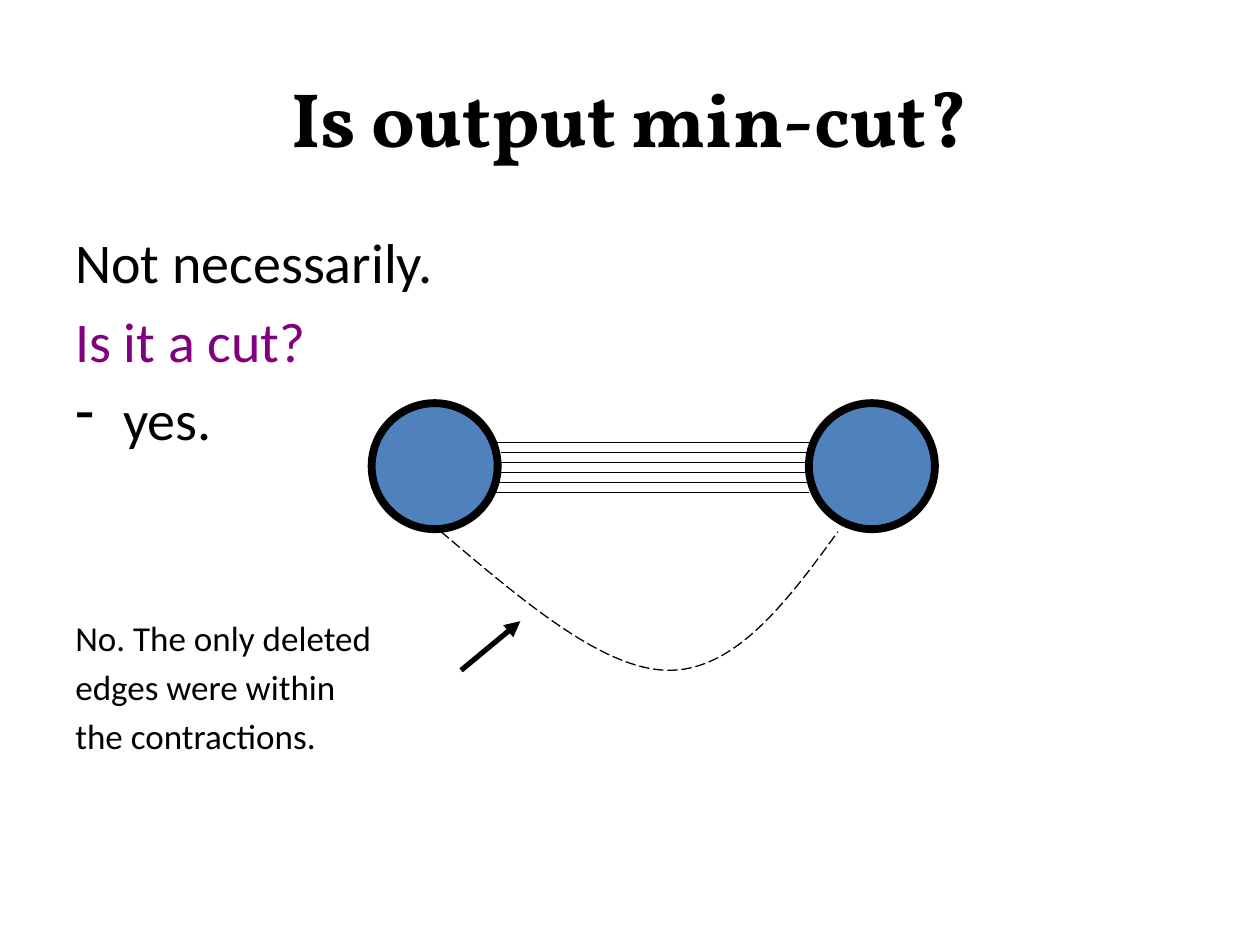
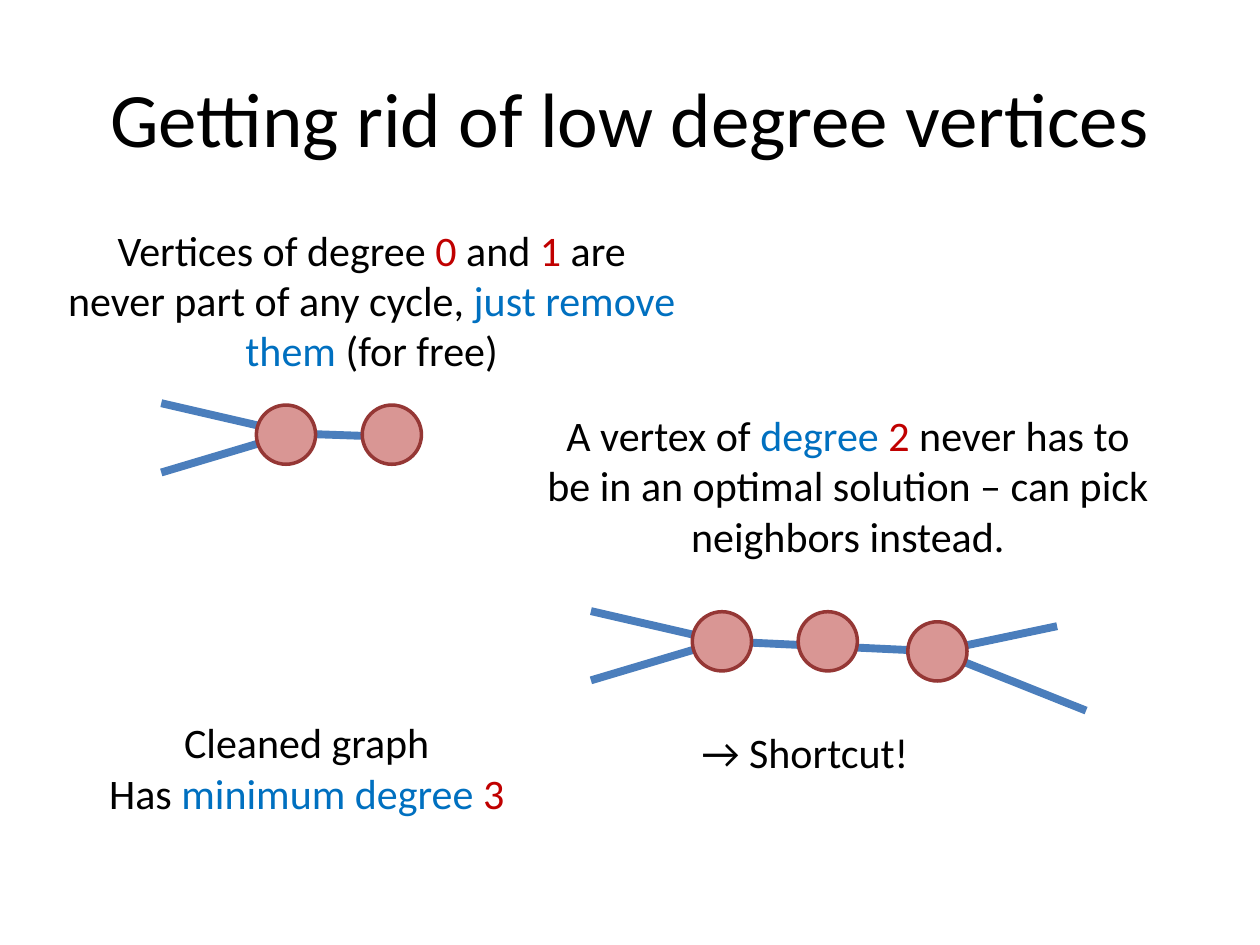
from lxml import etree
from pptx import Presentation
from pptx.dml.color import RGBColor
from pptx.enum.dml import MSO_LINE
from pptx.enum.shapes import MSO_CONNECTOR, MSO_SHAPE
from pptx.enum.text import MSO_ANCHOR, PP_ALIGN
from pptx.oxml.ns import qn
from pptx.util import Inches, Pt

STRAIGHT, OVAL = MSO_CONNECTOR.STRAIGHT, MSO_SHAPE.OVAL
LEFT, CENTER, MIDDLE = PP_ALIGN.LEFT, PP_ALIGN.CENTER, MSO_ANCHOR.MIDDLE
LONG_DASH = MSO_LINE.LONG_DASH

BLACK = RGBColor(0x00, 0x00, 0x00)
PURPLE = RGBColor(0x80, 0x00, 0x80)
RED = RGBColor(0xC0, 0x00, 0x00)
BLUE = RGBColor(0x00, 0x70, 0xC0)
NODE_BLUE = RGBColor(0x4F, 0x81, 0xBD)
EDGE_BLUE = RGBColor(0x4B, 0x7E, 0xBC)
NODE_PINK = RGBColor(0xD9, 0x96, 0x94)
NODE_RIM = RGBColor(0x95, 0x37, 0x35)

WIDTH, HEIGHT = 10, 7.5
MARGIN = WIDTH / 20
BODY_FONT = "Calibri"
TITLE_BOX = (MARGIN, HEIGHT / 25, WIDTH - 2 * MARGIN, HEIGHT / 6)


def style_font(font, **values):
    """Set font attributes from the given values."""
    color = values.pop("color", BLACK)
    for name, value in values.items():
        setattr(font, name, value)
    font.color.rgb = color


def style_line(line, color, width):
    """Set the colour and the width of a line in points."""
    line.color.rgb = color
    line.width = Pt(width)


def add_titled_slide(prs, title, **font):
    """Add a title-only slide with a centred title."""
    s = prs.slides.add_slide(prs.slide_layouts[5])
    sp = s.shapes.title
    for name, value in zip(("left", "top", "width", "height"), TITLE_BOX):
        setattr(sp, name, Inches(value))
    tf = sp.text_frame
    tf.text, tf.vertical_anchor = title, MIDDLE
    p = tf.paragraphs[0]
    p.alignment = CENTER
    style_font(p.runs[0].font, **{"name": BODY_FONT, "size": Pt(44), **font})
    return s


def add_text(s, box, paragraphs, size, align=LEFT, wrap=True, gap=0):
    """Add a text box of paragraphs, each a list of (text, colour) runs."""
    tf = s.shapes.add_textbox(*map(Inches, box)).text_frame
    tf.word_wrap = wrap
    for i, runs in enumerate(paragraphs):
        p = tf.paragraphs[0] if i == 0 else tf.add_paragraph()
        p.alignment = align
        p.space_before = Pt(gap if i else 0)
        for text, color in runs:
            r = p.add_run()
            r.text = text
            style_font(r.font, name=BODY_FONT, size=Pt(size), color=color)
    return tf


def add_dash_bullet(p):
    """Give a paragraph a hanging dash."""
    pPr = p._p.get_or_add_pPr()
    pPr.set("marL", str(Inches(0.38)))
    pPr.set("indent", str(-Inches(0.38)))
    etree.SubElement(pPr, qn("a:buChar")).set("char", "-")


def add_node(s, center, size, fill, rim, rim_width):
    """Add a round vertex about its centre."""
    x, y = (c - size / 2 for c in center)
    sp = s.shapes.add_shape(OVAL, *map(Inches, (x, y, size, size)))
    sp.shadow.inherit = False
    sp.fill.solid()
    sp.fill.fore_color.rgb = fill
    style_line(sp.line, rim, rim_width)


def add_edge(s, start, end, color, width, arrow=False):
    """Add a straight edge, with an arrowhead at its end if asked."""
    sp = s.shapes.add_connector(STRAIGHT, *map(Inches, (*start, *end)))
    style_line(sp.line, color, width)
    if arrow:
        etree.SubElement(sp.line._get_or_add_ln(), qn("a:tailEnd")).set("type", "triangle")
    etree.SubElement(sp._element.spPr, qn("a:effectLst"))


def add_dashed_curve(s, points):
    """Add a dashed outline of cubic curves through every third point."""
    start, *rest = [tuple(map(Inches, point)) for point in points]
    builder = s.shapes.build_freeform(*start, scale=1.0)
    builder.add_line_segments(rest, close=False)
    sp = builder.convert_to_shape()
    sp.shadow.inherit = False
    sp.fill.background()
    style_line(sp.line, BLACK, 0.75)
    sp.line.dash_style = LONG_DASH
    outline = next(sp._element.iter(qn("a:path")))
    segments = outline.findall(qn("a:lnTo"))
    for i in range(0, len(segments), 3):
        curve = etree.SubElement(outline, qn("a:cubicBezTo"))
        for segment in segments[i:i + 3]:
            curve.append(segment[0])
            outline.remove(segment)


def add_contracted_graph(s, left, top):
    """Draw two contracted vertices, their cut edges and a ruled-out edge."""
    def at(x, y):
        return left + x, top + y

    for x in (0.5, 3.97):
        add_node(s, at(x, 0.5), 1, NODE_BLUE, BLACK, 4.5)
    for i, x in enumerate((0.95, 1.03, 1.03, 1.03, 0.95, 0.95)):
        y = 0.31 + 0.08 * i
        add_edge(s, at(x, y), at(3.47, y), BLACK, 0.75)
    curve = ((0.55, 1.02), (1.2, 1.57), (1.84, 2.12), (2.36, 2.12),
             (2.89, 2.12), (3.3, 1.57), (3.7, 1.02))
    add_dashed_curve(s, [at(*point) for point in curve])
    add_edge(s, at(0.71, 2.12), at(1.18, 1.73), BLACK, 3, arrow=True)


def add_vertex_graph(s, hub, nodes, edges):
    """Draw pink vertices and edges placed relative to a hub with two loose ends."""
    def at(point):
        return hub[0] + point[0], hub[1] + point[1]

    loose_ends = [((0, 0), (-1.04, y)) for y in (-0.24, 0.31)]
    for start, end in edges + loose_ends:
        add_edge(s, at(start), at(end), EDGE_BLUE, 4.5)
    for node in nodes:
        add_node(s, at(node), 0.47, NODE_PINK, NODE_RIM, 2)


def build_min_cut(prs):
    """Build the slide that asks whether the output is a min-cut."""
    s = add_titled_slide(prs, "Is output min-cut?", name="Vollkorn", bold=True)
    answers = [[("Not necessarily.", BLACK)], [("Is it a cut?", PURPLE)], [("yes.", BLACK)]]
    tf = add_text(s, (MARGIN, 1.76, 4, 2), answers, 32, gap=6.4)
    add_dash_bullet(tf.paragraphs[-1])
    reasons = ("No. The only deleted", "edges were within", "the contractions.")
    add_text(s, (MARGIN, 4.84, 3, 1.25), [[(line, BLACK)] for line in reasons], 20, gap=4)
    add_contracted_graph(s, 2.95, 3.2)


def build_low_degree(prs):
    """Build the slide on removing vertices of low degree."""
    s = add_titled_slide(prs, "Getting rid of low degree vertices")
    add_text(s, (0.43, 1.73, 5.04, 1.31), [[
        ("Vertices of degree ", BLACK), ("0", RED), (" and ", BLACK), ("1 ", RED),
        ("are never part of any cycle, ", BLACK), ("just remove them", BLUE),
        (" (for free)", BLACK)]], 24, CENTER)
    add_text(s, (4.21, 3.2, 5.04, 1.31), [[
        ("A vertex of ", BLACK), ("degree ", BLUE), ("2", RED),
        (" never has to be in an optimal solution – can pick neighbors instead.", BLACK)]],
        24, CENTER)
    add_text(s, (5.47, 5.72, 1.88, 0.5), [[("→ Shortcut!", BLACK)]], 24, wrap=False)
    add_text(s, (0.75, 5.64, 3.37, 0.91), [
        [("Cleaned graph", BLACK)],
        [("Has ", BLACK), ("minimum degree ", BLUE), ("3", RED)]], 24, CENTER, wrap=False)
    add_vertex_graph(s, (2.32, 3.44), [(0.79, 0.01), (-0.05, 0.01)],
                     [((0, 0), (0.86, 0.03))])
    far = (1.71, 0.08)
    add_vertex_graph(s, (5.73, 5.09), [far, (0.84, 0), (0, 0)],
                     [((0, 0), far), (far, (2.66, -0.12)), (far, (2.89, 0.55))])


def main():
    """Build and save the presentation."""
    prs = Presentation()
    prs.slide_width, prs.slide_height = Inches(WIDTH), Inches(HEIGHT)
    build_min_cut(prs)
    build_low_degree(prs)
    prs.save("out.pptx")


if __name__ == "__main__":
    main()
